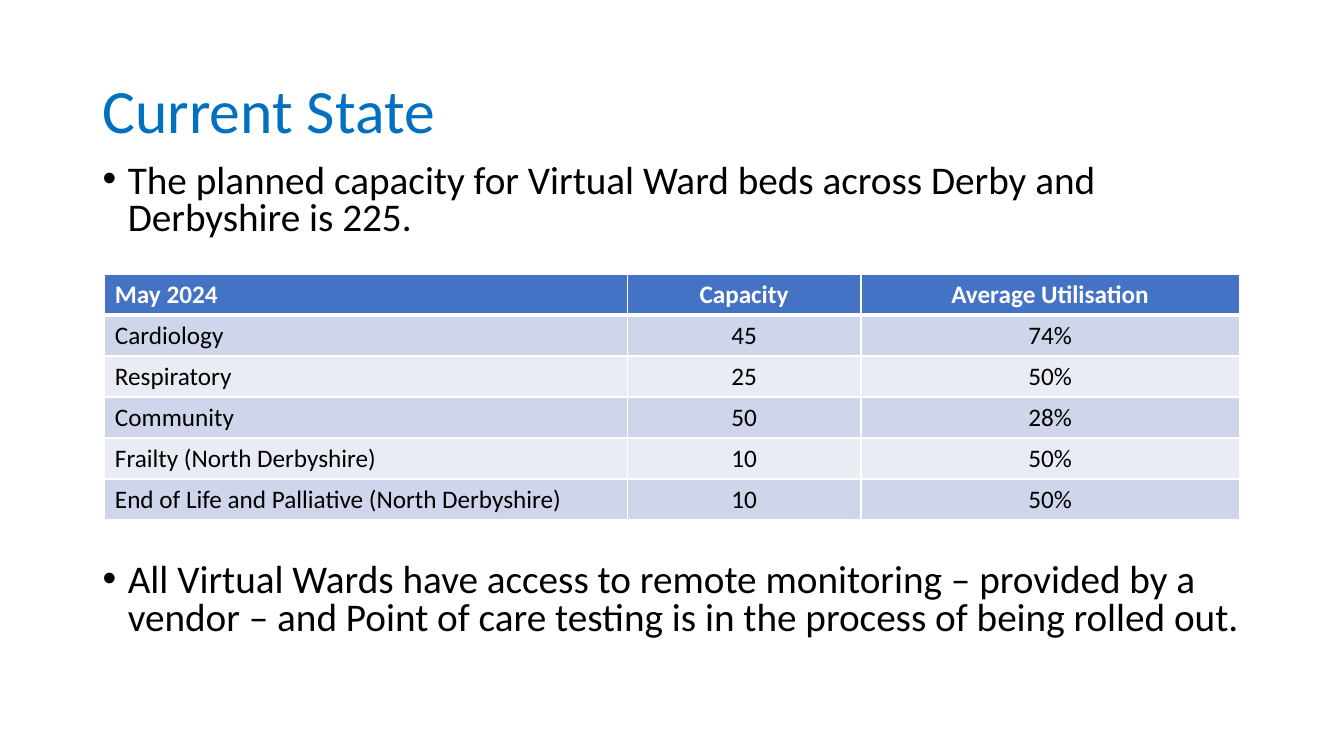
from lxml import etree
from pptx import Presentation
from pptx.dml.color import RGBColor
from pptx.enum.text import MSO_ANCHOR, PP_ALIGN
from pptx.oxml.ns import qn
from pptx.util import Inches, Pt

LEFT, CENTER = PP_ALIGN.LEFT, PP_ALIGN.CENTER
MIDDLE, TOP = MSO_ANCHOR.MIDDLE, MSO_ANCHOR.TOP
FONT = "Calibri"
BLANK_LAYOUT = 6
COLORS = {
    "title": "0070C0",
    "text": "000000",
    "white": "FFFFFF",
    "header": "4472C4",
    "odd": "CFD5EA",
    "even": "E9EBF5",
}
COLUMN_WIDTHS = [5.18, 2.32, 3.75]
WARD_ROWS = [
    ("May 2024", "Capacity", "Average Utilisation"),
    ("Cardiology", "45", "74%"),
    ("Respiratory", "25", "50%"),
    ("Community", "50", "28%"),
    ("Frailty (North Derbyshire)", "10", "50%"),
    ("End of Life and Palliative (North Derbyshire)", "10", "50%"),
]


def color(name):
    return RGBColor.from_string(COLORS[name])


def style_font(paragraph, size, color_name, bold=False):
    paragraph.font.name = FONT
    paragraph.font.size = Pt(size)
    paragraph.font.bold = bold
    paragraph.font.color.rgb = color(color_name)


def add_text(slide, box, text, size, color_name, line_spacing, anchor):
    shape = slide.shapes.add_textbox(*map(Inches, box))
    frame = shape.text_frame
    frame.word_wrap = True
    frame.vertical_anchor = anchor
    paragraph = frame.paragraphs[0]
    paragraph.text = text
    paragraph.line_spacing = line_spacing
    style_font(paragraph, size, color_name)
    return paragraph


def add_title(slide, box, text):
    add_text(slide, box, text, 44, "title", 0.9, MIDDLE)


def add_bullet(slide, box, text):
    paragraph = add_text(slide, box, text, 28, "text", 0.8, TOP)
    paragraph.space_before = Pt(10)
    properties = paragraph._p.get_or_add_pPr()
    properties.set("marL", str(Inches(0.25)))
    properties.set("indent", str(-Inches(0.25)))
    bullet_font = etree.SubElement(properties, qn("a:buFont"))
    bullet_font.set("typeface", "Arial")
    etree.SubElement(properties, qn("a:buChar")).set("char", "•")


def add_borders(cell, widths):
    properties = cell._tc.get_or_add_tcPr()
    for side, width in widths.items():
        line = etree.SubElement(properties, qn(f"a:ln{side}"), w=str(Pt(width)))
        fill = etree.SubElement(line, qn("a:solidFill"))
        etree.SubElement(fill, qn("a:srgbClr"), val=COLORS["white"])


def add_ward_table(slide, box):
    shape = slide.shapes.add_table(len(WARD_ROWS), len(COLUMN_WIDTHS), *map(Inches, box))
    table = shape.table
    for column, width in zip(table.columns, COLUMN_WIDTHS):
        column.width = Inches(width)
    for row_index, values in enumerate(WARD_ROWS):
        is_header = row_index == 0
        fill_name = "header" if is_header else "odd" if row_index % 2 else "even"
        widths = {"L": 1, "R": 1, "T": 3 if row_index == 1 else 1, "B": 3 if is_header else 1}
        for column_index, value in enumerate(values):
            cell = table.cell(row_index, column_index)
            add_borders(cell, widths)
            cell.fill.solid()
            cell.fill.fore_color.rgb = color(fill_name)
            paragraph = cell.text_frame.paragraphs[0]
            paragraph.text = value
            paragraph.alignment = CENTER if column_index else LEFT
            style_font(paragraph, 18, "white" if is_header else "text", is_header)


def add_current_state_slide(presentation):
    slide = presentation.slides.add_slide(presentation.slide_layouts[BLANK_LAYOUT])
    left, width = 0.92, 11.5
    add_title(slide, (left, 0.4, width, 1.45), "Current State")
    add_bullet(
        slide,
        (left, 1.58, width, 1),
        "The planned capacity for Virtual Ward beds across Derby and Derbyshire is 225.",
    )
    add_ward_table(slide, (1.04, 2.72, sum(COLUMN_WIDTHS), 2.44))
    add_bullet(
        slide,
        (left, 5.54, width, 1.4),
        "All Virtual Wards have access to remote monitoring – provided by "
        "a vendor – and Point of care testing is in the process of being rolled out.",
    )


def main():
    presentation = Presentation()
    presentation.slide_width = Inches(13.33)
    presentation.slide_height = Inches(7.5)
    add_current_state_slide(presentation)
    presentation.save("out.pptx")


if __name__ == "__main__":
    main()
